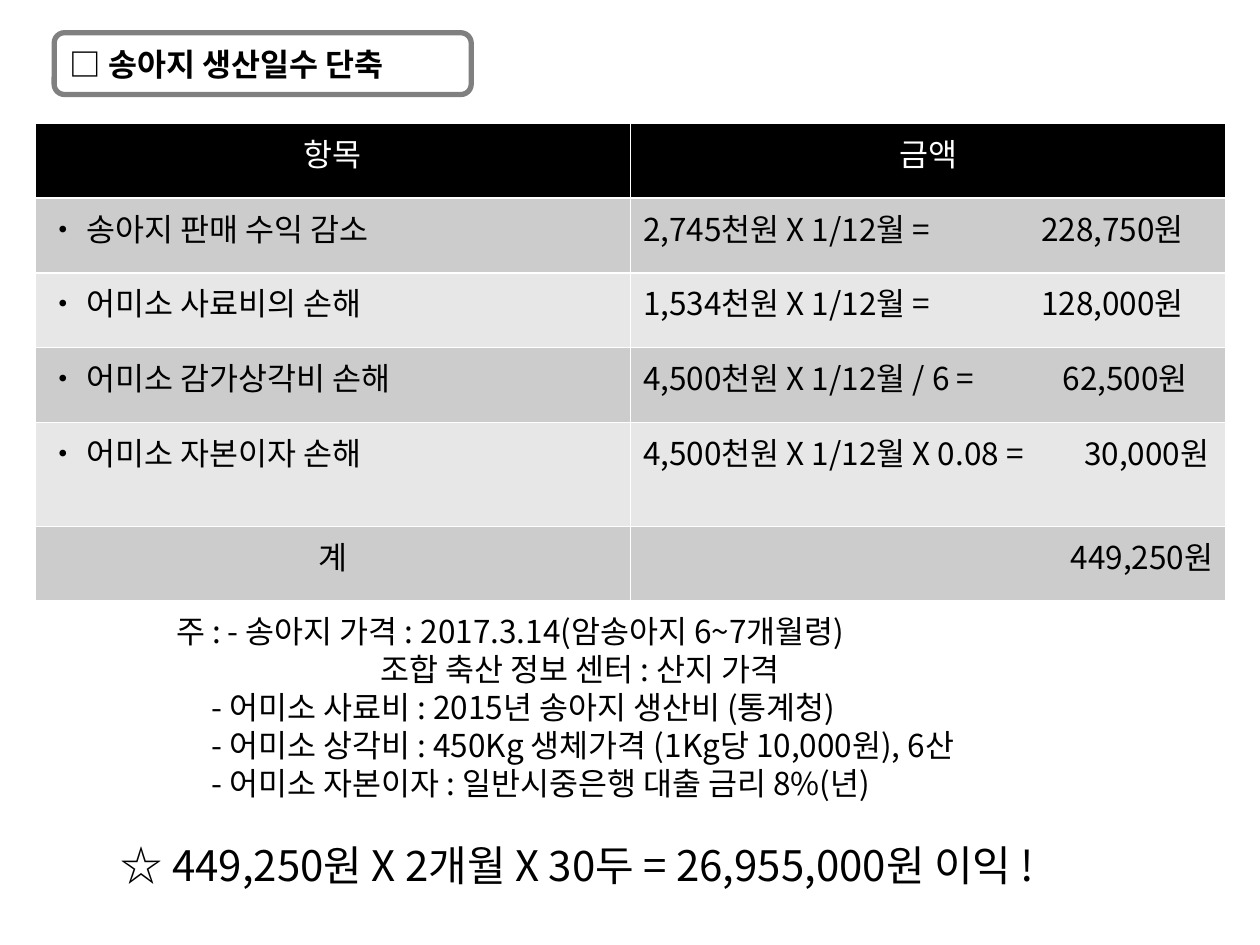
from lxml import etree
from pptx import Presentation
from pptx import util as u
from pptx.dml.color import RGBColor
from pptx.enum import shapes, text
from pptx.oxml.ns import qn

FONT = "Noto Sans CJK KR"
WIDTH, HEIGHT = 10, 7.5
COLORS = {"ink": "000000", "paper": "FFFFFF", "frame": "808080",
          "dark": "CCCCCC", "light": "E7E7E7"}
LEFT, CENTER, RIGHT = text.PP_ALIGN.LEFT, text.PP_ALIGN.CENTER, text.PP_ALIGN.RIGHT

ITEMS = [
    ("• 송아지 판매 수익 감소", "2,745천원 X 1/12월 =\t228,750원", 3.16),
    ("• 어미소 사료비의 손해", "1,534천원 X 1/12월 =\t128,000원", 3.16),
    ("• 어미소 감가상각비 손해", "4,500천원 X 1/12월 / 6 =\t62,500원", 3.33),
    ("• 어미소 자본이자 손해", "4,500천원 X 1/12월 X 0.08 =\t30,000원", 3.5),
]
NOTES = [
    ("주 : - 송아지 가격 : 2017.3.14(암송아지 6~7개월령)", 1, 18, 0),
    ("조합 축산 정보 센터 : 산지 가격", 2.62, 18, 0),
    ("- 어미소 사료비 : 2015년 송아지 생산비 (통계청)", 1.28, 18, 0),
    ("- 어미소 상각비 : 450Kg 생체가격 (1Kg당 10,000원), 6산", 1.28, 18, 0),
    ("- 어미소 자본이자 : 일반시중은행 대출 금리 8%(년)", 1.28, 18, 0),
    ("☆ 449,250원 X 2개월 X 30두 = 26,955,000원 이익 !", 0.56, 24, 22),
]


def rgb(name):
    """Return the named colour."""
    return RGBColor.from_string(COLORS[name])


def box(left, top, width, height):
    """Turn shares of the slide into a position and size."""
    return [u.Inches(round(share * side, 2)) for share, side in
            ((left, WIDTH), (top, HEIGHT), (width, WIDTH), (height, HEIGHT))]


def write(p, words, size=18, color="ink", bold=False, align=LEFT):
    """Write one paragraph and format its run."""
    p.text, p.alignment = words, align
    for r in p.runs:
        r.font.size, r.font.bold, r.font.name = u.Pt(size), bold, FONT
        r.font.color.rgb = rgb(color)
        etree.SubElement(r._r.get_or_add_rPr(), qn("a:ea"), typeface=FONT)


def add_tab(p, inches):
    """Give a paragraph one left tab stop."""
    tabs = etree.SubElement(p._p.get_or_add_pPr(), qn("a:tabLst"))
    etree.SubElement(tabs, qn("a:tab"), pos=str(u.Inches(inches)), algn="l")


def fill_cell(cell, words, fill, color="ink", align=LEFT, tab=None):
    """Fill and write one table cell."""
    cell.fill.solid()
    cell.fill.fore_color.rgb = rgb(fill)
    p = cell.text_frame.paragraphs[0]
    if tab:
        add_tab(p, tab)
    write(p, words, color=color, align=align)


def add_cost_table(s):
    """Add the table of losses and their total."""
    rows = len(ITEMS) + 2
    table = s.shapes.add_table(rows, 2, *box(0.028, 0.13, 0.945, 0.475)).table
    for col, words in enumerate(("항목", "금액")):
        fill_cell(table.cell(0, col), words, "ink", "paper", CENTER)
    for row, (item, amount, tab) in enumerate(ITEMS, 1):
        fill = "dark" if row % 2 else "light"
        fill_cell(table.cell(row, 0), item, fill)
        fill_cell(table.cell(row, 1), amount, fill, tab=tab)
    fill_cell(table.cell(rows - 1, 0), "계", "dark", align=CENTER)
    fill_cell(table.cell(rows - 1, 1), "449,250원", "dark", align=RIGHT)


def add_notes(s):
    """Add the indented notes and the closing profit line."""
    tf = s.shapes.add_textbox(*box(0.03, 0.636, 0.945, 0.309)).text_frame
    tf.word_wrap, tf.auto_size = True, text.MSO_AUTO_SIZE.SHAPE_TO_FIT_TEXT
    tf.margin_top = u.Inches(0.09)
    for i, (words, indent, size, gap) in enumerate(NOTES):
        p = tf.add_paragraph() if i else tf.paragraphs[0]
        p._p.get_or_add_pPr().set("marL", str(u.Inches(indent)))
        p.line_spacing = u.Pt(size * 1.2)
        if gap:
            p.space_before = u.Pt(gap)
        write(p, words, size)


def add_title(s, words):
    """Add the rounded title frame."""
    sp = s.shapes.add_shape(shapes.MSO_SHAPE.ROUNDED_RECTANGLE,
                            *box(0.043, 0.035, 0.331, 0.065))
    sp.shadow.inherit = False
    sp.fill.solid()
    sp.fill.fore_color.rgb = rgb("paper")
    sp.line.color.rgb, sp.line.width = rgb("frame"), u.Pt(3)
    tf = sp.text_frame
    tf.vertical_anchor = text.MSO_ANCHOR.MIDDLE
    write(tf.paragraphs[0], words, bold=True)


def main():
    """Build and save the slide."""
    prs = Presentation()
    prs.slide_width, prs.slide_height = u.Inches(WIDTH), u.Inches(HEIGHT)
    s = prs.slides.add_slide(prs.slide_layouts[6])
    add_cost_table(s)
    add_notes(s)
    add_title(s, "□ 송아지 생산일수 단축")
    prs.save("out.pptx")


if __name__ == "__main__":
    main()
